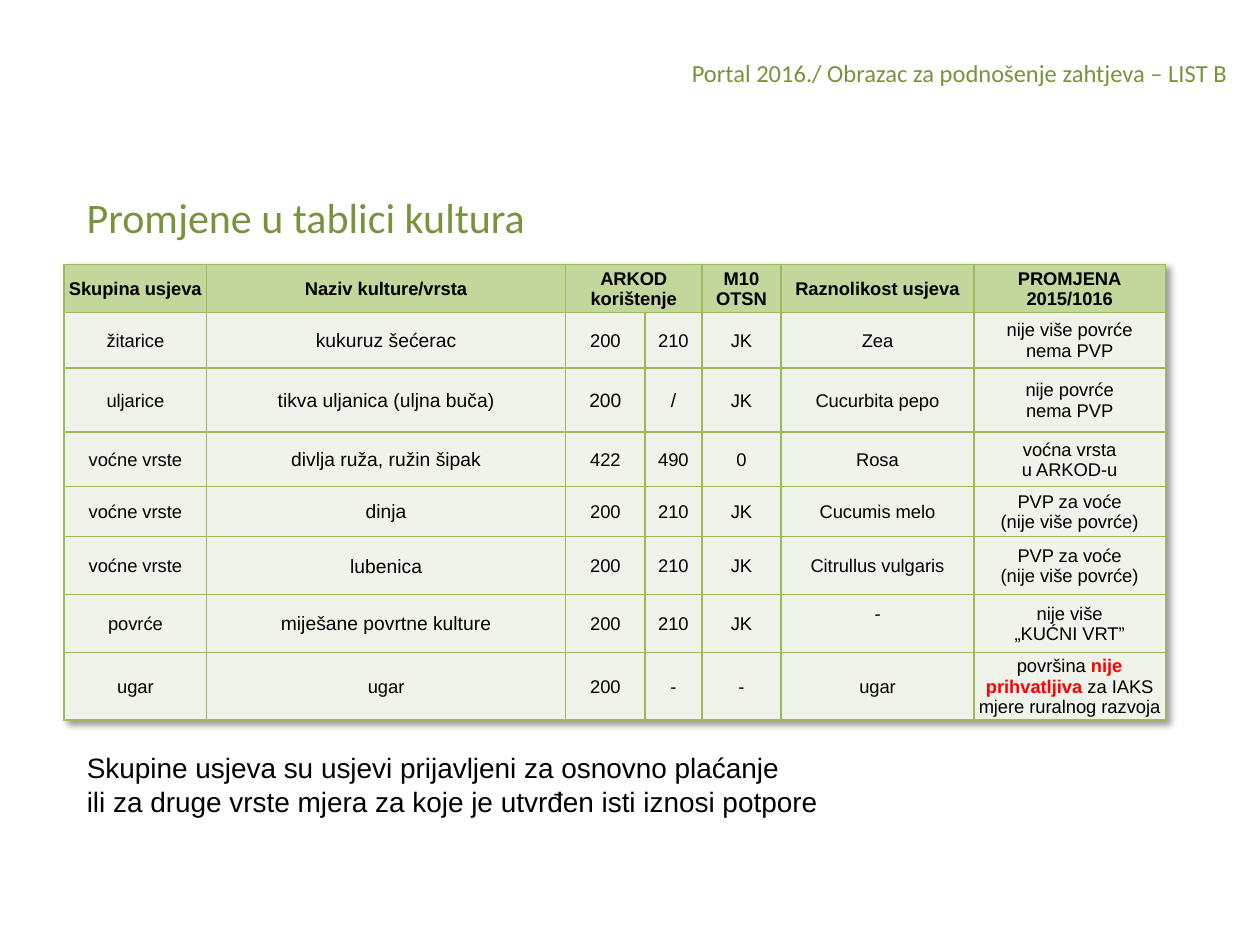
import lxml.etree
import pptx
import pptx.dml.color
import pptx.enum.text
import pptx.oxml
import pptx.oxml.ns
import pptx.util

Inches = pptx.util.Inches
Pt = pptx.util.Pt
RGBColor = pptx.dml.color.RGBColor
CENTER = pptx.enum.text.PP_ALIGN.CENTER
LEFT = pptx.enum.text.PP_ALIGN.LEFT
RIGHT = pptx.enum.text.PP_ALIGN.RIGHT

OLIVE = RGBColor(0x77, 0x93, 0x3C)
BLACK = RGBColor(0, 0, 0)
RED = RGBColor(0xFF, 0, 0)
HEADER_FILL = RGBColor(0xC3, 0xD6, 0x9B)
BODY_FILL = RGBColor(0xEF, 0xF3, 0xEA)
BORDER = RGBColor(0x9B, 0xBB, 0x59)

COLUMN_WIDTHS = [1.13, 2.85, 0.63, 0.45, 0.63, 1.53, 1.52]
ROW_HEIGHTS = [0.38, 0.44, 0.51, 0.43, 0.4, 0.46, 0.46, 0.53]
CROP_ROWS = [
    ["Skupina usjeva", "Naziv kulture/vrsta", "ARKOD\nkorištenje", "",
     "M10\nOTSN", "Raznolikost usjeva", "PROMJENA\n2015/1016"],
    ["žitarice", "kukuruz šećerac", "200", "210", "JK", "Zea",
     "nije više povrće\nnema PVP"],
    ["uljarice", "tikva uljanica (uljna buča)", "200", "/", "JK",
     "Cucurbita pepo", "nije povrće\nnema PVP"],
    ["voćne vrste", "divlja ruža, ružin šipak", "422", "490", "0", "Rosa",
     "voćna vrsta\nu ARKOD-u"],
    ["voćne vrste", "dinja", "200", "210", "JK", "Cucumis melo",
     "PVP za voće\n(nije više povrće)"],
    ["voćne vrste", "lubenica", "200", "210", "JK", "Citrullus vulgaris",
     "PVP za voće\n(nije više povrće)"],
    ["povrće", "miješane povrtne kulture", "200", "210", "JK", "-",
     "nije više\n„KUĆNI VRT”"],
    ["ugar", "ugar", "200", "-", "-", "ugar",
     "površina *nije prihvatljiva* za IAKS mjere ruralnog razvoja"],
]
LARGE_CELLS = {(row, 1) for row in range(1, 7)} | {(2, 2), (2, 3)}
RAISED_CELL = (6, 5)

SHADOW_XML = (
    '<a:effectLst %s><a:outerShdw blurRad="50800" dist="38100" dir="2700000" '
    'algn="tl" rotWithShape="0"><a:srgbClr val="000000"><a:alpha val="40000"/>'
    '</a:srgbClr></a:outerShdw></a:effectLst>' % pptx.oxml.ns.nsdecls("a"))


def set_values(target, values):
    """Set every attribute named in values on the target."""
    for name, value in values.items():
        setattr(target, name, value)


def write_text(text_frame, text, alignment, color, font_values):
    """Write one paragraph per line, with starred parts in bold red."""
    for index, line in enumerate(text.split("\n")):
        paragraph = text_frame.paragraphs[0] if index == 0 else text_frame.add_paragraph()
        paragraph.alignment = alignment
        for position, part in enumerate(line.split("*")):
            run = paragraph.add_run()
            run.text = part
            set_values(run.font, font_values)
            run.font.color.rgb = color
            if position % 2:
                run.font.bold = True
                run.font.color.rgb = RED


def add_text(slide, box, text, alignment, color, font_values):
    """Place a wrapped text box in the given box."""
    shape = slide.shapes.add_textbox(*map(Inches, box))
    shape.text_frame.word_wrap = True
    write_text(shape.text_frame, text, alignment, color, font_values)


def add_borders(cell):
    """Draw a one-point line on each side of a cell."""
    properties = cell._tc.get_or_add_tcPr()
    for index, side in enumerate(("lnL", "lnR", "lnT", "lnB")):
        properties.insert(index, pptx.oxml.parse_xml(
            f'<a:{side} {pptx.oxml.ns.nsdecls("a")} w="{Pt(1)}"><a:solidFill>'
            f'<a:srgbClr val="{BORDER}"/></a:solidFill></a:{side}>'))


def format_cell(cell, row, column):
    """Fill one crop cell with its text, colour and borders."""
    set_values(cell, {
        "margin_left": Inches(0.01),
        "margin_right": Inches(0.01),
        "margin_top": Inches(0.01),
        "margin_bottom": Inches(0.16 if (row, column) == RAISED_CELL else 0),
        "vertical_anchor": pptx.enum.text.MSO_ANCHOR.MIDDLE,
    })
    cell.fill.solid()
    cell.fill.fore_color.rgb = BODY_FILL if row else HEADER_FILL
    add_borders(cell)
    if not cell.is_spanned:
        size = Pt(11 if (row, column) in LARGE_CELLS else 10.5)
        write_text(cell.text_frame, CROP_ROWS[row][column], CENTER, BLACK,
                   {"name": "Arial", "size": size, "bold": row == 0})


def add_crop_table(slide, left, top):
    """Place the crop table with its top left corner at the given point."""
    frame = slide.shapes.add_table(
        len(ROW_HEIGHTS), len(COLUMN_WIDTHS), Inches(left), Inches(top),
        Inches(sum(COLUMN_WIDTHS)), Inches(sum(ROW_HEIGHTS)))
    table = frame.table
    table.horz_banding = False
    table._tbl.tblPr.insert(0, pptx.oxml.parse_xml(SHADOW_XML))
    for column, width in zip(table.columns, COLUMN_WIDTHS):
        column.width = Inches(width)
    for row, height in zip(table.rows, ROW_HEIGHTS):
        row.height = Inches(height)
    table.cell(0, 2).merge(table.cell(0, 3))
    for row in range(len(ROW_HEIGHTS)):
        for column in range(len(COLUMN_WIDTHS)):
            format_cell(table.cell(row, column), row, column)


def build_crop_slide(presentation):
    """Add the slide on changes in the crop table."""
    slide = presentation.slides.add_slide(presentation.slide_layouts[6])
    add_text(slide, (0.59, 1.47, 8.83, 5.45), "Promjene u tablici kultura",
             LEFT, OLIVE, {"name": "Calibri", "size": Pt(24)})
    add_text(slide, (4.29, 0.41, 5.55, 0.34),
             "Portal 2016./ Obrazac za podnošenje zahtjeva – LIST B",
             RIGHT, OLIVE, {"name": "Calibri", "size": Pt(14)})
    add_crop_table(slide, 0.51, 2.1)
    add_text(slide, (0.59, 5.91, 6.42, 0.91),
             "Skupine usjeva su usjevi prijavljeni za osnovno plaćanje\n"
             "ili za druge vrste mjera za koje je utvrđen isti iznosi potpore",
             LEFT, BLACK, {"name": "Arial", "size": Pt(16)})


def main():
    """Build and save the presentation."""
    presentation = pptx.Presentation()
    set_values(presentation, {"slide_width": Inches(10), "slide_height": Inches(7.5)})
    build_crop_slide(presentation)
    presentation.save("out.pptx")


if __name__ == "__main__":
    main()
